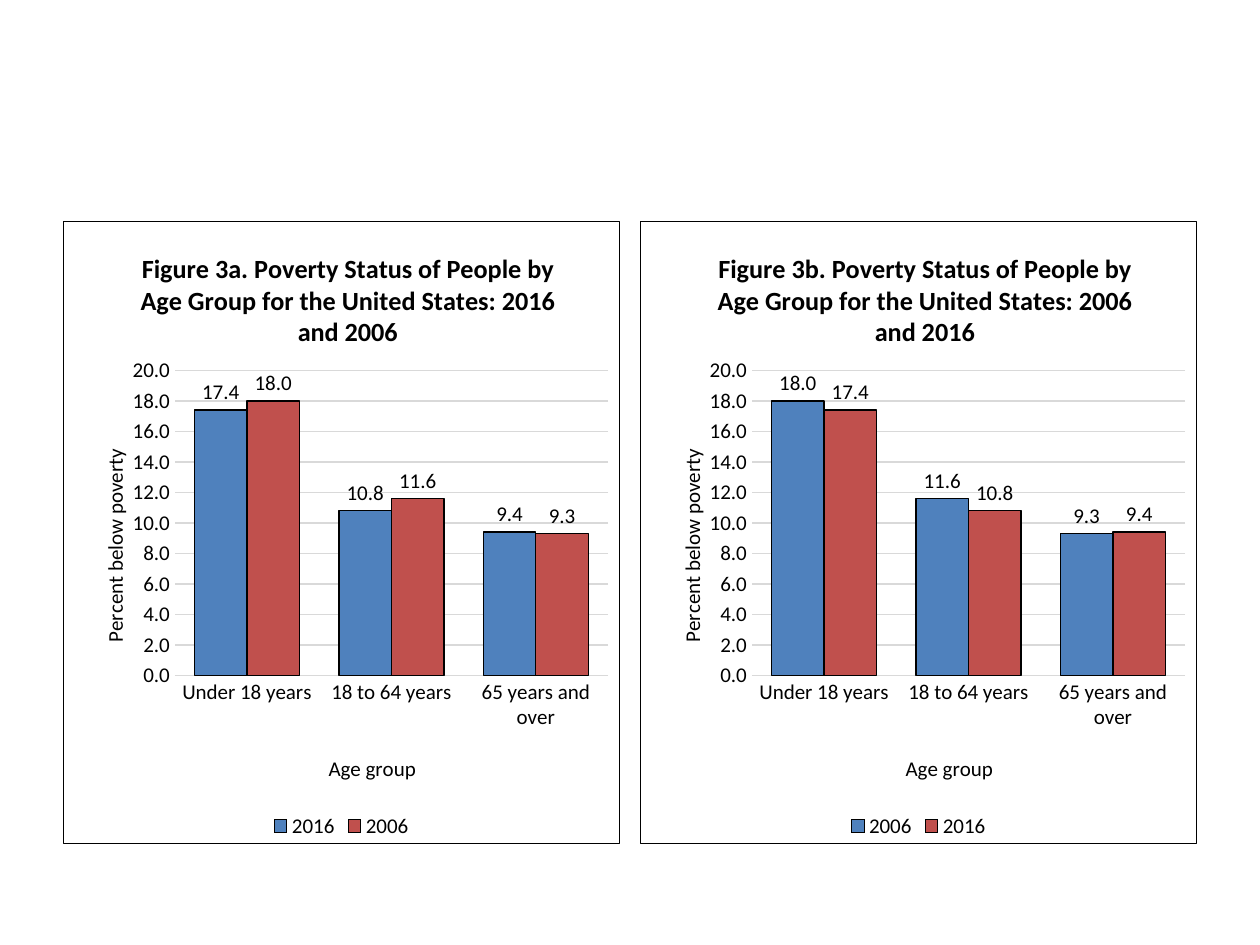
from lxml.etree import SubElement
from pptx import Presentation
from pptx.chart.data import CategoryChartData
from pptx.dml.color import RGBColor
from pptx.enum.chart import (XL_CHART_TYPE as ChartType, XL_LABEL_POSITION as LabelPosition,
                             XL_LEGEND_POSITION as LegendPosition, XL_TICK_MARK as TickMark)
from pptx.oxml import parse_xml
from pptx.oxml.ns import nsdecls, qn
from pptx.util import Inches, Pt

BLACK = RGBColor(0x00, 0x00, 0x00)
GREY = RGBColor(0xD9, 0xD9, 0xD9)
BLUE = RGBColor(0x4F, 0x81, 0xBD)
RED = RGBColor(0xC0, 0x50, 0x4D)

AGE_GROUPS = ["Under 18 years", "18 to 64 years", "65 years and over"]
POVERTY = {"2016": [17.4, 10.8, 9.4], "2006": [18.0, 11.6, 9.3]}

BORDER = (f'<c:spPr {nsdecls("c", "a")}><a:solidFill><a:srgbClr val="FFFFFF"/></a:solidFill>'
          f'<a:ln w="9525"><a:solidFill><a:srgbClr val="{BLACK}"/></a:solidFill></a:ln></c:spPr>')


class ChartPage:
    """Style and current slide for the poverty charts."""
    font = {"name": "Calibri", "size": Pt(12), "bold": False, "color": BLACK}
    number_format = "#,##0.0"

    def __init__(self, page):
        self.page = page

    def style_font(self, font, **changes):
        for key, value in {**self.font, **changes}.items():
            if key == "color":
                font.color.rgb = value
            else:
                setattr(font, key, value)

    def style_line(self, line, color):
        line.color.rgb = color
        line.width = Pt(0.75)

    def place(self, parent, **fractions):
        """Set a manual layout, in fractions of the chart."""
        for old in parent.findall(qn("c:layout")):
            parent.remove(old)
        layout = parent.makeelement(qn("c:layout"))
        manual = SubElement(layout, qn("c:manualLayout"))
        if "w" in fractions:
            SubElement(manual, qn("c:layoutTarget")).set("val", "inner")
        for mode in ("xMode", "yMode"):
            SubElement(manual, qn(f"c:{mode}")).set("val", "edge")
        for key, value in fractions.items():
            SubElement(manual, qn(f"c:{key}")).set("val", str(value))
        text = parent.find(qn("c:tx"))
        parent.insert(0 if text is None else parent.index(text) + 1, layout)

    def title(self, title, text, x, y, **changes):
        para = title.text_frame.paragraphs[0]
        span = para.add_run()
        span.text = text
        self.style_font(para.font, **changes)
        self.style_font(span.font, **changes)
        self.place(title.element if hasattr(title, "element") else title, x=x, y=y)

    def axis(self, axis, text, x, y):
        axis.major_tick_mark = axis.minor_tick_mark = TickMark.NONE
        self.style_font(axis.tick_labels.font)
        self.title(axis.axis_title, text, x, y)

    def series(self, series, color):
        series.format.fill.solid()
        series.format.fill.fore_color.rgb = color
        self.style_line(series.format.line, BLACK)
        labels = series.data_labels
        labels.show_value = True
        labels.position = LabelPosition.OUTSIDE_END
        labels.number_format = self.number_format
        labels.number_format_is_linked = False
        self.style_font(labels.font)

    def chart(self, heading, years, left):
        data = CategoryChartData(number_format=self.number_format)
        data.categories = AGE_GROUPS
        for year in years:
            data.add_series(year, POVERTY[year])
        chart = self.page.shapes.add_chart(
            ChartType.COLUMN_CLUSTERED, Inches(left), Inches(1.75),
            Inches(4.42), Inches(4.95), data).chart
        self.style_font(chart.font)

        # Frame and heading
        chart.element.find(qn("c:chart")).addnext(parse_xml(BORDER))
        chart.has_title = True
        self.title(chart.chart_title, heading, 0.13, 0.04, size=Pt(15), bold=True)

        # Axes
        self.axis(chart.category_axis, "Age group", 0.47, 0.85)
        self.style_line(chart.category_axis.format.line, GREY)
        values = chart.value_axis
        self.axis(values, "Percent below poverty", 0.06, 0.36)
        values.axis_title.element.find(".//" + qn("a:bodyPr")).set("rot", "-5400000")
        values.minimum_scale, values.maximum_scale, values.major_unit = 0, 20, 2
        values.tick_labels.number_format = self.number_format
        values.tick_labels.number_format_is_linked = False
        values.format.line.fill.background()
        self.style_line(values.major_gridlines.format.line, GREY)

        # Columns
        plot = chart.plots[0]
        plot.gap_width = 75
        plot.vary_by_categories = False
        for series, color in zip(plot.series, (BLUE, RED)):
            self.series(series, color)
        self.place(chart.element.find(".//" + qn("c:plotArea")), x=0.2, y=0.24, w=0.78, h=0.49)

        # Legend
        chart.has_legend = True
        chart.legend.position = LegendPosition.BOTTOM
        chart.legend.include_in_layout = False
        self.style_font(chart.legend.font)


def main():
    deck = Presentation()
    deck.slide_width, deck.slide_height = Inches(10), Inches(7.5)
    charts = ChartPage(deck.slides.add_slide(deck.slide_layouts[6]))
    figures = [("3a", ("2016", "2006"), 0.5), ("3b", ("2006", "2016"), 5.08)]
    for number, years, left in figures:
        heading = (f"Figure {number}. Poverty Status of People by Age Group "
                   f"for the United States: {' and '.join(years)}")
        charts.chart(heading, years, left)
    deck.save("out.pptx")


if __name__ == "__main__":
    main()
